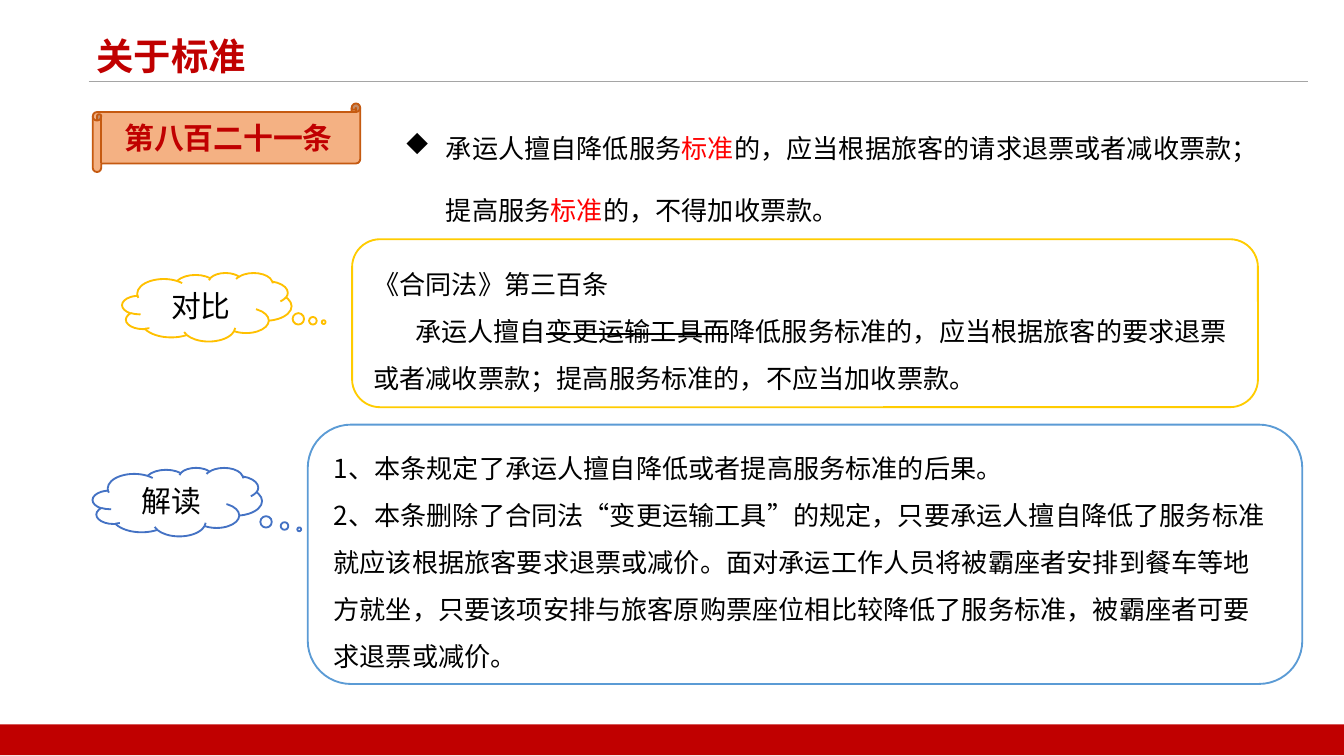
from dataclasses import dataclass

import lxml.etree
import pptx
import pptx.dml.color
import pptx.enum.shapes
import pptx.enum.text
import pptx.oxml.ns
import pptx.util

Inches = pptx.util.Inches
Pt = pptx.util.Pt
SHAPE = pptx.enum.shapes.MSO_SHAPE
ALIGN = pptx.enum.text.PP_ALIGN
ANCHOR = pptx.enum.text.MSO_ANCHOR
qn = pptx.oxml.ns.qn
FONT = "Noto Sans CJK SC"
BLACK, RED, CRIMSON, WHITE = "000000", "FF0000", "C00000", "FFFFFF"


@dataclass
class Piece:
    text: str
    color: str | None = None
    struck: bool = False


@dataclass
class Line:
    pieces: list[Piece]
    size: int = 14
    color: str = BLACK
    bold: bool = False
    align: ALIGN = ALIGN.LEFT
    spacing: float = 1.0
    margin: float = 0
    indent: float = 0
    bullet: str = ""


@dataclass
class Panel:
    kind: SHAPE
    box: tuple[float, float, float, float]
    fill: str | None
    outline: str | None
    lines: list[Line]
    adjustments: tuple[float, ...] = ()


def paint(target, color: str) -> None:
    target.rgb = pptx.dml.color.RGBColor.from_string(color)


def write(frame, lines: list[Line]) -> None:
    for index, line in enumerate(lines):
        paragraph = frame.add_paragraph() if index else frame.paragraphs[0]
        paragraph.alignment = line.align
        paragraph.line_spacing = line.spacing
        properties = paragraph._p.get_or_add_pPr()
        properties.set("marL", str(Inches(line.margin)))
        properties.set("indent", str(Inches(line.indent)))
        if line.bullet:
            lxml.etree.SubElement(properties, qn("a:buFont"), typeface="Wingdings", charset="2")
            lxml.etree.SubElement(properties, qn("a:buChar"), char=line.bullet)
        font = paragraph.font
        font.name, font.size, font.bold = FONT, Pt(line.size), line.bold
        paint(font.color, line.color)
        defaults = properties.find(qn("a:defRPr"))
        lxml.etree.SubElement(defaults, qn("a:ea"), typeface=FONT)
        for piece in line.pieces:
            run = paragraph.add_run()
            run.text = piece.text
            if piece.color:
                paint(run.font.color, piece.color)
            if piece.struck:
                run._r.get_or_add_rPr().set("strike", "sngStrike")


def add_panel(slide, panel: Panel) -> None:
    shape = slide.shapes.add_shape(panel.kind, *map(Inches, panel.box))
    shape.shadow.inherit = False
    for index, value in enumerate(panel.adjustments):
        shape.adjustments[index] = value
    if panel.fill:
        shape.fill.solid()
        paint(shape.fill.fore_color, panel.fill)
    else:
        shape.fill.background()
    if panel.outline:
        paint(shape.line.color, panel.outline)
        shape.line.width = Pt(1)
    else:
        shape.line.fill.background()
    shape.text_frame.word_wrap = True
    shape.text_frame.vertical_anchor = ANCHOR.MIDDLE
    write(shape.text_frame, panel.lines)


def add_text(slide, box: tuple[float, float, float, float], line: Line, wrap: bool) -> None:
    frame = slide.shapes.add_textbox(*map(Inches, box)).text_frame
    frame.word_wrap = wrap
    write(frame, [line])


def add_rule(slide, left: float, right: float, top: float) -> None:
    rule = slide.shapes.add_connector(
        pptx.enum.shapes.MSO_CONNECTOR.STRAIGHT,
        Inches(left), Inches(top), Inches(right), Inches(top))
    paint(rule.line.color, "A5A5A5")
    rule.line.width = Pt(0.5)
    lxml.etree.SubElement(rule._element.spPr, qn("a:effectLst"))


def label(text: str, color: str = BLACK, bold: bool = False) -> list[Line]:
    return [Line([Piece(text)], 16, color, bold, ALIGN.CENTER)]


def body(*pieces: Piece, indent: float = 0) -> Line:
    return Line(list(pieces), spacing=1.5, indent=indent)


ARTICLE = Line([
    Piece("承运人擅自降低服务"),
    Piece("标准", RED),
    Piece("的，应当根据旅客的请求退票或者减收票款；提高服务"),
    Piece("标准", RED),
    Piece("的，不得加收票款。"),
], spacing=2.0, margin=0.31, indent=-0.31, bullet="u")

COMPARISON = [
    body(Piece("《合同法》第三百条")),
    body(
        Piece("承运人擅自"),
        Piece("变更运输工具而", struck=True),
        Piece("降低服务标准的，应当根据旅客的要求退票或者减收票款；提高服务标准的，不应当加收票款。"),
        indent=0.31),
]

READING = [
    body(Piece("1、本条规定了承运人擅自降低或者提高服务标准的后果。")),
    body(Piece(
        "2、本条删除了合同法“变更运输工具”的规定，只要承运人擅自降低了服务标准"
        "就应该根据旅客要求退票或减价。面对承运工作人员将被霸座者安排到餐车等地"
        "方就坐，只要该项安排与旅客原购票座位相比较降低了服务标准，被霸座者可要"
        "求退票或减价。")),
]

PANELS = [
    Panel(SHAPE.RECTANGLE, (0, 5.39, 10, 0.23), CRIMSON, None, []),
    Panel(SHAPE.HORIZONTAL_SCROLL, (0.69, 0.77, 1.99, 0.51), "F4B183", "C55A11",
          label("第八百二十一条", CRIMSON, True)),
    Panel(SHAPE.CLOUD_CALLOUT, (0.91, 2.03, 1.26, 0.51), WHITE, "FFC000",
          label("对比"), (0.69, 0.22)),
    Panel(SHAPE.ROUNDED_RECTANGLE, (2.62, 1.78, 6.74, 1.25), None, "FFCC00", COMPARISON),
    Panel(SHAPE.CLOUD_CALLOUT, (0.69, 3.48, 1.26, 0.51), WHITE, "4472C4",
          label("解读"), (0.72, 0.4)),
    Panel(SHAPE.ROUNDED_RECTANGLE, (2.29, 3.16, 7.4, 1.93), None, "5B9BD5", READING),
]


def main() -> None:
    deck = pptx.Presentation()
    deck.slide_width = Inches(10)
    deck.slide_height = deck.slide_width * 9 // 16
    slide = deck.slides.add_slide(deck.slide_layouts[6])
    slide.background.fill.solid()
    paint(slide.background.fill.fore_color, WHITE)
    add_rule(slide, 0.66, 9.73, 0.61)
    title = Line([Piece("关于标准")], 20, CRIMSON, True)
    add_text(slide, (0.62, 0.2, 1.84, 0.51), title, False)
    add_text(slide, (2.91, 0.7, 6.63, 0.96), ARTICLE, True)
    for panel in PANELS:
        add_panel(slide, panel)
    deck.save("out.pptx")


if __name__ == "__main__":
    main()
